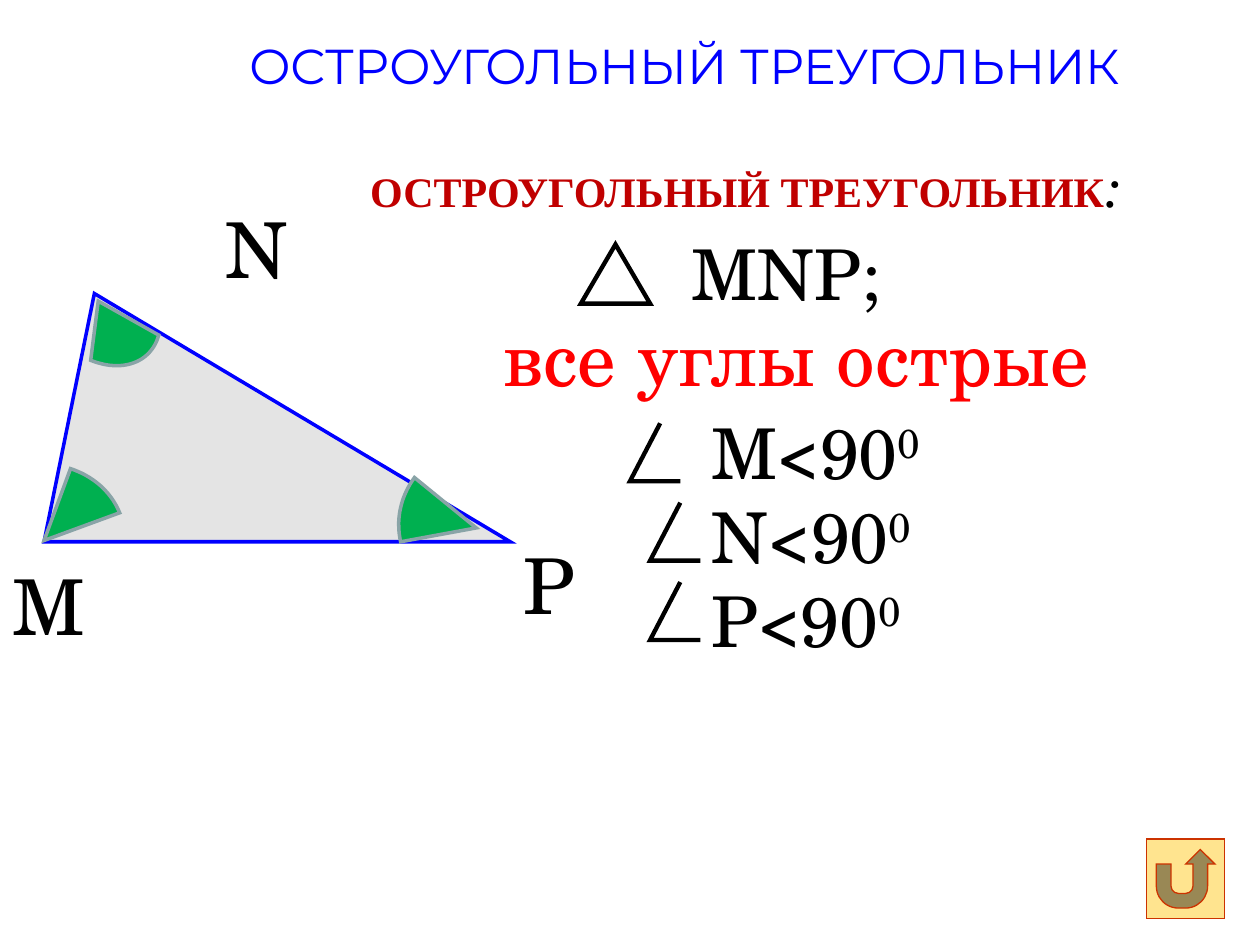
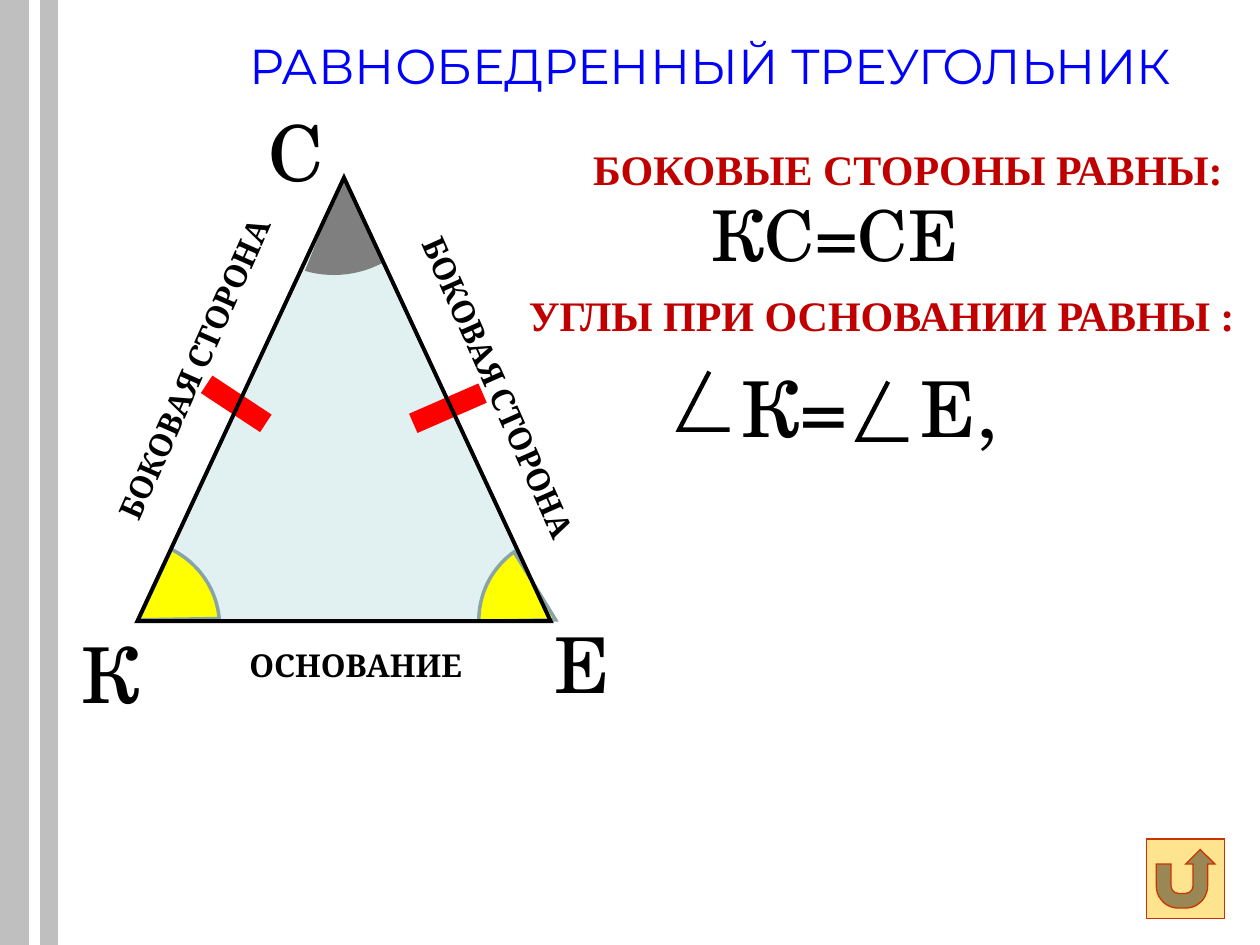
from dataclasses import dataclass

from lxml import etree
from pptx import Presentation
from pptx import util as u
from pptx.dml.color import RGBColor
from pptx.enum import shapes, text
from pptx.oxml.ns import qn

PX_PER_INCH = 100
SCALE = u.Inches(1) // PX_PER_INCH


def emu(*lengths):
    return [length * SCALE for length in lengths]


@dataclass(frozen=True)
class Theme:
    ink: str = "000000"
    title: str = "0000FF"
    heading: str = "C00000"
    accent: str = "FF0000"
    stripe: str = "BFBFBF"
    mint: str = "BBE0E3"
    arc_edge: str = "89A4A7"
    acute: str = "00B050"
    base_angle: str = "FFFF00"
    apex_angle: str = "7F7F7F"
    button: str = "FFE48F"
    button_edge: str = "CC3300"
    title_face: str = "Montserrat"
    math_face: str = "TeX Gyre Schola"
    heading_face: str = "Times New Roman"
    side_face: str = "Cambria"
    title_size: int = 28
    letter_size: int = 44
    formula_size: int = 40
    colon_size: int = 32
    heading_size: int = 24
    side_size: int = 18


class Lesson:
    def __init__(self, theme):
        self.theme = theme
        self.deck = Presentation()
        self.deck.slide_width, self.deck.slide_height = emu(1000, 750)
        self.slide = None

    def start(self, title):
        self.slide = self.deck.slides.add_slide(self.deck.slide_layouts[6])
        t = self.theme
        self.label(title, (188, 23, 812, 57), face=t.title_face,
                   size=t.title_size, color=t.title)

    def label(self, content, at, turn=0, **look):
        box = self.slide.shapes.add_textbox(*emu(*at))
        box.rotation = turn
        frame = box.text_frame
        frame.word_wrap = True
        frame.vertical_anchor = text.MSO_ANCHOR.TOP
        lines = [[(content, {})]] if isinstance(content, str) else content
        for index, line in enumerate(lines):
            paragraph = frame.add_paragraph() if index else frame.paragraphs[0]
            for words, changes in line:
                run = paragraph.add_run()
                run.text = words
                self.format_run(run, **{**look, **changes})

    def format_run(self, run, face, size, color, bold=False, italic=False, raised=0):
        font = run.font
        font.name, font.size = face, u.Pt(size)
        font.bold, font.italic = bold, italic
        font.color.rgb = RGBColor.from_string(color)
        if raised:
            run._r.get_or_add_rPr().set("baseline", str(raised * 1000))

    def letter(self, name, x, y, width=109, color=None):
        t = self.theme
        self.label(name, (x, y, width, 84), face=t.math_face,
                   size=t.letter_size, color=color or t.ink)

    def formula(self, content, at):
        t = self.theme
        self.label(content, at, face=t.math_face, size=t.formula_size, color=t.ink)

    def heading(self, content, at):
        t = self.theme
        self.label(content, at, face=t.heading_face, size=t.heading_size,
                   color=t.heading, bold=True)

    def side_name(self, name, at, turn=0):
        t = self.theme
        self.label(name, at, turn, face=t.side_face, size=t.side_size,
                   color=t.ink, bold=True)

    def paint(self, shape, fill=None, opacity=100, edge=None, weight=0):
        shape.shadow.inherit = False
        if fill:
            shape.fill.solid()
            shape.fill.fore_color.rgb = RGBColor.from_string(fill)
            if opacity < 100:
                color = shape._element.spPr.find(qn("a:solidFill"))[0]
                etree.SubElement(color, qn("a:alpha"), val=str(opacity * 1000))
        else:
            shape.fill.background()
        if edge:
            shape.line.color.rgb = RGBColor.from_string(edge)
            shape.line.width = u.Pt(weight)
            outline = shape._element.spPr.find(qn("a:ln"))
            etree.SubElement(outline, qn("a:miter"), lim="800000")
        else:
            shape.line.fill.background()

    def preset(self, kind, at, apex=None, **look):
        shape = self.slide.shapes.add_shape(kind, *emu(*at))
        if apex is not None:
            shape.adjustments[0] = apex
        self.paint(shape, **look)

    def triangle(self, at, apex=0.5, **look):
        self.preset(shapes.MSO_SHAPE.ISOSCELES_TRIANGLE, at, apex, **look)

    def outline(self, points, closed, **look):
        start, *rest = [tuple(round(c) for c in emu(*point)) for point in points]
        builder = self.slide.shapes.build_freeform(*start)
        builder.add_line_segments(rest, close=closed)
        self.paint(builder.convert_to_shape(), **look)

    def angle_sign(self, x, y):
        self.outline([(x + 24, y), (x, y + 46), (x + 40, y + 46)], False,
                     edge=self.theme.ink, weight=2.5)

    def sector(self, vertex, curve, fill, edge=None, steps=24):
        arc = []
        for step in range(steps + 1):
            s = step / steps
            weights = ((1 - s) ** 3, 3 * s * (1 - s) ** 2, 3 * s * s * (1 - s), s ** 3)
            arc.append([sum(w * c for w, c in zip(weights, axis)) for axis in zip(*curve)])
        self.outline(arc + [vertex], True, fill=fill, edge=edge, weight=2)

    def line(self, start, end, color, weight):
        line = self.slide.shapes.add_connector(
            shapes.MSO_CONNECTOR.STRAIGHT, *emu(*start, *end))
        line.line.color.rgb = RGBColor.from_string(color)
        line.line.width = u.Pt(weight)
        etree.SubElement(line._element.spPr, qn("a:effectLst"))

    def return_button(self):
        t = self.theme
        self.preset(shapes.MSO_SHAPE.ACTION_BUTTON_RETURN, (910, 666, 62, 63),
                    fill=t.button, edge=t.button_edge, weight=0.75)


def acute_triangle(lesson):
    t = lesson.theme
    lesson.start("ОСТРОУГОЛЬНЫЙ ТРЕУГОЛЬНИК")
    lesson.triangle((35, 233, 370, 197), 0.108, fill=t.stripe, opacity=42,
                    edge=t.title, weight=2)
    for name, x, y in (("N", 169, 155), ("P", 406, 422), ("M", 0, 438)):
        lesson.letter(name, x, y)

    colon = dict(face=t.math_face, size=t.colon_size, color=t.ink, bold=False, italic=True)
    lesson.heading([[("ОСТРОУГОЛЬНЫЙ ТРЕУГОЛЬНИК", {}), (":", colon)]],
                   (284, 115, 700, 64))
    lesson.triangle((461, 194, 55, 47), edge=t.ink, weight=2.5)
    lesson.formula("MNP;", (539, 178, 188, 77))
    lesson.letter("все углы острые", 390, 241, width=677, color=t.accent)
    lesson.formula([[(f"{name}<90", {}), ("0", {"raised": 30})] for name in "MNP"],
                   (555, 320, 331, 212))
    for x, y in ((500, 336), (516, 399), (516, 462)):
        lesson.angle_sign(x, y)

    for vertex, curve in (
        ((35, 429), ((56, 372), (74, 378), (88, 390), (95, 407))),
        ((78, 239), ((126, 266), (120, 288), (97, 296), (72, 286))),
        ((378, 419), ((318, 430), (314, 412), (318, 394), (329, 379))),
    ):
        lesson.sector(vertex, curve, t.acute, t.arc_edge)
    lesson.return_button()


def isosceles_triangle(lesson):
    t = lesson.theme
    lesson.start("РАВНОБЕДРЕННЫЙ ТРЕУГОЛЬНИК")
    lesson.preset(shapes.MSO_SHAPE.RECTANGLE, (0, 0, 23, 750), fill=t.stripe)
    lesson.line((39, 0), (39, 750), t.stripe, 10.5)
    for name, x, y in (("К", 55, 492), ("С", 203, 78), ("E", 430, 484)):
        lesson.letter(name, x, y)

    lesson.heading("БОКОВЫЕ СТОРОНЫ РАВНЫ:", (461, 109, 625, 51))
    lesson.formula("КС=СЕ", (555, 147, 297, 77))
    lesson.heading("УГЛЫ ПРИ ОСНОВАНИИ РАВНЫ :", (410, 225, 594, 51))
    for name, x, y in (("К=", 539, 295), ("Е,", 681, 303)):
        lesson.angle_sign(x, y)
        lesson.letter(name, x + 40, 281, width=141)

    body = (109, 141, 328, 352)
    lesson.triangle(body, fill=t.mint, opacity=44, edge=t.arc_edge, weight=2)
    for start, end in (((164, 305), (211, 336)), ((328, 336), (383, 312))):
        lesson.line(start, end, t.accent, 12)
    lesson.side_name("ОСНОВАНИЕ", (188, 508, 211, 40))
    for x, y, turn in ((9, 264, 294), (251, 296, 66)):
        lesson.side_name("БОКОВАЯ СТОРОНА", (x, y, 297, 40), turn)

    for vertex, curve in (
        ((110, 492), ((136, 436), (158, 447), (172, 468), (174, 491))),
        ((441, 492), ((380, 493), (380, 471), (390, 451), (408, 438))),
    ):
        lesson.sector(vertex, curve, t.base_angle, t.arc_edge)
    lesson.sector((272, 141), ((305, 208), (285, 219), (262, 221), (242, 215)), t.apex_angle)
    lesson.triangle(body, edge=t.ink, weight=2.25)
    lesson.return_button()


def main():
    lesson = Lesson(Theme())
    acute_triangle(lesson)
    isosceles_triangle(lesson)
    lesson.deck.save("out.pptx")


if __name__ == "__main__":
    main()
